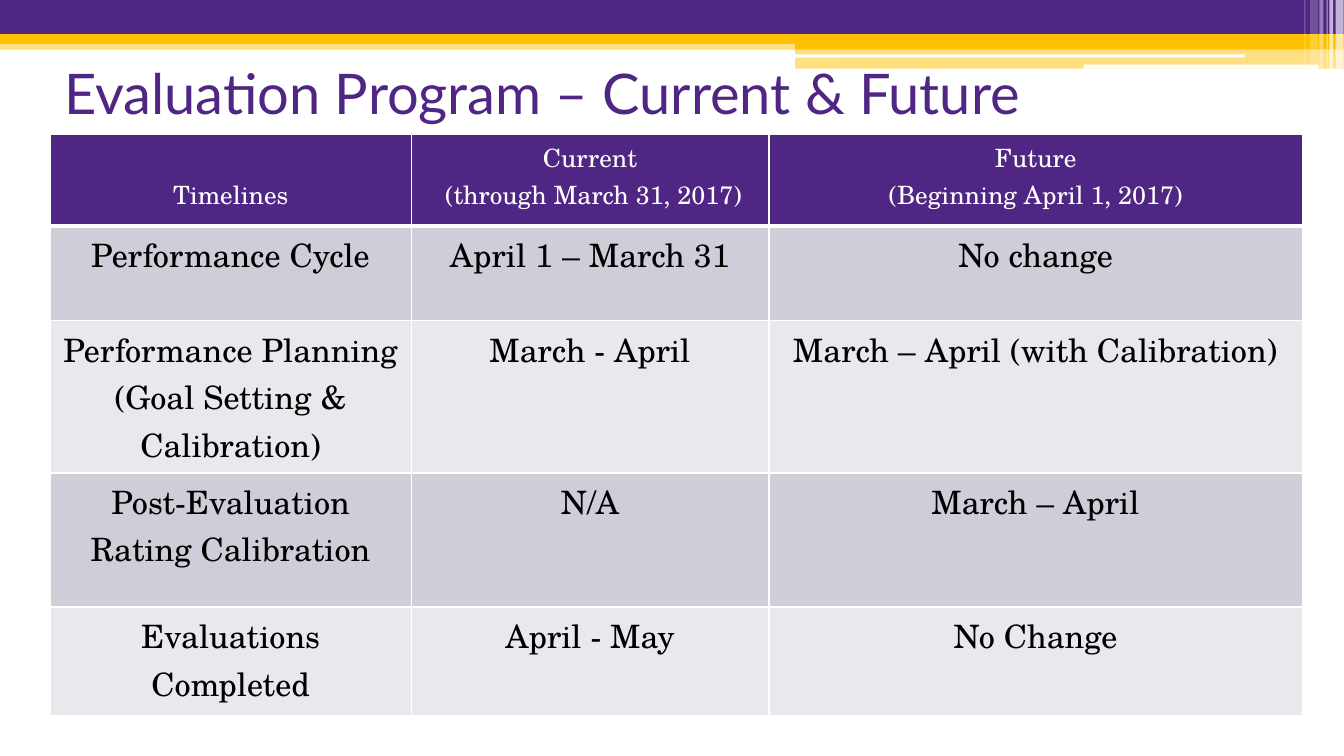
"""Build the evaluation timeline slide."""
from dataclasses import dataclass
from typing import Any

from lxml.etree import SubElement
from pptx import Presentation
from pptx.dml.color import RGBColor
from pptx.enum.shapes import MSO_SHAPE
from pptx.enum.text import MSO_ANCHOR, MSO_AUTO_SIZE, PP_ALIGN
from pptx.oxml.ns import qn
from pptx.util import Cm, Pt

PURPLE = RGBColor(0x4F, 0x26, 0x83)
GOLD = RGBColor(0xFF, 0xC0, 0x00)
WHITE = RGBColor(0xFF, 0xFF, 0xFF)
BLACK = RGBColor(0, 0, 0)
DARK = RGBColor(0xD0, 0xCD, 0xD9)
LIGHT = RGBColor(0xE9, 0xE8, 0xED)
SERIF = "TeX Gyre Schola"
WIDE = 33.87


@dataclass
class Bar:
    """A filled bar, in centimetres, with opacity in percent."""
    left: float
    top: float
    width: float
    height: float
    fill: RGBColor
    alpha: int = 100
    kind: MSO_SHAPE = MSO_SHAPE.RECTANGLE


@dataclass
class Row:
    """A table row: height in centimetres and cell texts."""
    height: float
    cells: tuple[str, str, str]


ROUND = MSO_SHAPE.ROUNDED_RECTANGLE
BARS = [
    Bar(0, 1.02, WIDE, 0.23, GOLD, 50),
    Bar(0, 0, WIDE, 0.86, PURPLE),
    Bar(0, 0.86, WIDE, 0.25, GOLD),
    Bar(20.04, 0.99, 13.83, 0.25, GOLD),
    Bar(20.04, 1.22, 13.83, 0.51, GOLD, 50),
    Bar(20.02, 1.37, 11.35, 0.08, WHITE, kind=ROUND),
    Bar(27.31, 1.63, 5.92, 0.1, WHITE, kind=ROUND),
    Bar(33.66, 0, 0.2, 1.73, WHITE, 65),
    Bar(33.5, 0, 0.1, 1.73, WHITE, 65),
    Bar(33.43, 0, 0.03, 1.73, WHITE, 60),
    Bar(33.25, 0, 0.1, 1.73, WHITE, 40),
    Bar(33.02, 0, 0.2, 1.63, WHITE, 20),
    Bar(32.87, 0, 0.03, 1.63, WHITE, 30),
]
COLS = [9.09, 9.02, 13.44]
ROWS = [
    Row(2.31, ("Timelines", "Current\n (through March 31, 2017)",
               "Future\n(Beginning April 1, 2017)")),
    Row(2.39, ("Performance Cycle", "April 1 – March 31", "No change")),
    Row(3.35, ("Performance Planning (Goal Setting & Calibration)",
               "March - April", "March – April (with Calibration)")),
    Row(3.38, ("Post-Evaluation Rating Calibration", "N/A", "March – April")),
    Row(2.74, ("Evaluations Completed", "April - May", "No Change")),
]
TITLE = {"name": "Lato", "size": Pt(40), "bold": False}
HEAD = {"name": SERIF, "size": Pt(18), "bold": False}
BODY = {"name": SERIF, "size": Pt(23), "bold": False}


def style(item: Any, form: dict[str, Any]) -> None:
    """Set each format value on the item."""
    for key, value in form.items():
        setattr(item, key, value)


def draw_bar(slide: Any, bar: Bar) -> None:
    """Draw one bar of the banner."""
    shape = slide.shapes.add_shape(
        bar.kind, Cm(bar.left), Cm(bar.top), Cm(bar.width), Cm(bar.height))
    shape.shadow.inherit = False
    shape.line.fill.background()
    shape.fill.solid()
    shape.fill.fore_color.rgb = bar.fill
    if bar.alpha < 100:
        tint = shape.fill._xPr.find(qn("a:solidFill"))[0]
        SubElement(tint, qn("a:alpha"), val=str(bar.alpha * 1000))


def edge(cell: Any, base: int) -> None:
    """Give a cell white borders, the lower one of the given points."""
    props = cell._tc.get_or_add_tcPr()
    for side, size in zip("LRTB", (1, 1, 1, base)):
        line = SubElement(props, qn(f"a:ln{side}"), w=str(Pt(size)))
        fill = SubElement(line, qn("a:solidFill"))
        SubElement(fill, qn("a:srgbClr"), val=str(WHITE))


def fill_cell(cell: Any, text: str, head: bool, fill: RGBColor) -> None:
    """Write and format one table cell."""
    edge(cell, 3 if head else 1)
    cell.fill.solid()
    cell.fill.fore_color.rgb = fill
    cell.text = text
    for para in cell.text_frame.paragraphs:
        para.alignment = PP_ALIGN.CENTER
        for run in para.runs:
            style(run.font, HEAD if head else BODY)
            run.font.color.rgb = WHITE if head else BLACK


def draw_table(slide: Any) -> None:
    """Draw the table of timelines."""
    table = slide.shapes.add_table(
        len(ROWS), len(COLS), Cm(1.27), Cm(3.38), Cm(sum(COLS)),
        Cm(sum(row.height for row in ROWS))).table
    for col, width in zip(table.columns, COLS):
        col.width = Cm(width)
    for i, row in enumerate(ROWS):
        table.rows[i].height = Cm(row.height)
        fill = PURPLE if i == 0 else DARK if i % 2 else LIGHT
        for j, text in enumerate(row.cells):
            fill_cell(table.cell(i, j), text, i == 0, fill)
    table.cell(0, 0).margin_top = Cm(1.06)


def draw_title(slide: Any) -> None:
    """Place and format the title."""
    title = slide.shapes.title
    style(title, {"left": Cm(1.37), "top": Cm(0.84),
                  "width": Cm(30.48), "height": Cm(2.97)})
    frame = title.text_frame
    frame.text = "Evaluation Program – Current & Future"
    style(frame, {"auto_size": MSO_AUTO_SIZE.NONE, "word_wrap": True,
                  "vertical_anchor": MSO_ANCHOR.MIDDLE})
    para = frame.paragraphs[0]
    para.alignment = PP_ALIGN.LEFT
    style(para.runs[0].font, TITLE)
    para.runs[0].font.color.rgb = PURPLE


def main() -> None:
    """Build and save the deck."""
    deck = Presentation()
    style(deck, {"slide_width": Cm(WIDE), "slide_height": Cm(19.05)})
    slide = deck.slides.add_slide(deck.slide_layouts[5])
    for bar in BARS:
        draw_bar(slide, bar)
    draw_title(slide)
    draw_table(slide)
    deck.save("out.pptx")


if __name__ == "__main__":
    main()
